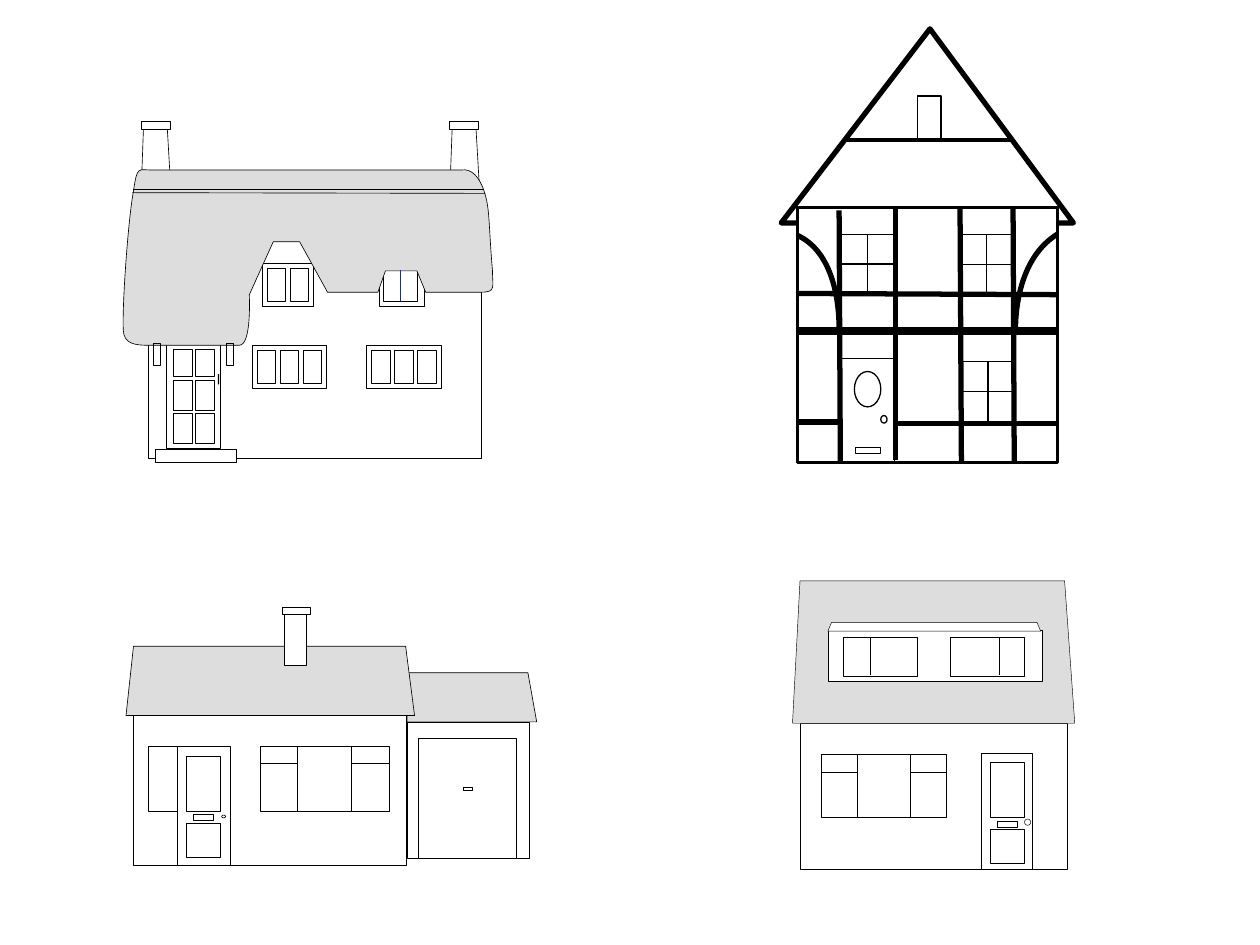
from dataclasses import dataclass

from pptx import Presentation
from pptx.dml.color import RGBColor
from pptx.enum.shapes import MSO_CONNECTOR, MSO_SHAPE
from pptx.oxml.ns import qn
from pptx.oxml.xmlchemy import OxmlElement
from pptx.util import Pt

RECT, OVAL = MSO_SHAPE.RECTANGLE, MSO_SHAPE.OVAL
STRAIGHT = MSO_CONNECTOR.STRAIGHT
BLANK_LAYOUT = 6


@dataclass(frozen=True)
class Theme:
    ink: str = "000000"
    paper: str = "FFFFFF"
    roof: str = "DDDDDD"
    blue: str = "0E2FAD"
    hairline: float = 0.25
    fine: float = 0.38
    pane: float = 0.63
    thin: float = 0.75
    frame: float = 1
    wall: float = 1.63
    tie: float = 2.25
    timber: float = 3
    beam: float = 4.5


THEME = Theme()


class House:
    """A group whose parts are placed in points from the box's top left corner."""

    def __init__(self, page, box, weight, fill=None):
        self.shapes = page.shapes.add_group_shape().shapes
        self.left, self.top = box
        self.weight, self.fill = weight, fill

    def at(self, x, y):
        return Pt(self.left + x), Pt(self.top + y)

    def paint(self, shape, fill, weight):
        shape.shadow.inherit = False
        fill = fill or self.fill
        if fill:
            shape.fill.solid()
            shape.fill.fore_color.rgb = RGBColor.from_string(fill)
        else:
            shape.fill.background()
        weight = self.weight if weight is None else weight
        if weight:
            shape.line.width = Pt(weight)
            shape.line.color.rgb = RGBColor.from_string(THEME.ink)
        else:
            shape.line.fill.background()

    def block(self, x, y, width, height, fill=None, weight=None, kind=RECT):
        shape = self.shapes.add_shape(kind, *self.at(x, y), Pt(width), Pt(height))
        self.paint(shape, fill, weight)

    def line(self, x1, y1, x2, y2, weight=None, color=THEME.ink):
        line = self.shapes.add_connector(STRAIGHT, *self.at(x1, y1), *self.at(x2, y2))
        line.line.width = Pt(weight or self.weight)
        line.line.color.rgb = RGBColor.from_string(color)
        line._element.spPr.append(OxmlElement("a:effectLst"))

    def outline(self, start, *steps, fill=None, weight=None, close=True):
        """Each step is the end (x, y) of a straight edge, or the six numbers of a Bezier curve."""
        builder = self.shapes.build_freeform(*self.at(*start), scale=1.0)
        points = [self.at(*step[i:i + 2]) for step in steps for i in range(0, len(step), 2)]
        builder.add_line_segments(points, close=close)
        shape = builder.convert_to_shape()
        edges = iter(list(shape._element.iter(qn("a:lnTo"))))
        for step in steps:
            edge = next(edges)
            if len(step) == 6:
                edge.tag = qn("a:cubicBezTo")
                for extra in (next(edges), next(edges)):
                    edge.append(extra[0])
                    extra.getparent().remove(extra)
        self.paint(shape, fill, weight)

    def cross_window(self, x, y, width, height):
        self.block(x, y, width, height, weight=THEME.pane)
        self.line(x + width / 2, y, x + width / 2, y + height, THEME.thin)
        self.line(x, y + height / 2, x + width, y + height / 2, THEME.thin)

    def casement(self, x, y, width, height, panes, margin=2.9, gap=2.7):
        self.block(x, y, width, height)
        pane = (width - 2 * margin - (panes - 1) * gap) / panes
        for i in range(panes):
            self.block(x + margin + i * (pane + gap), y + margin, pane, height - 2 * margin)

    def picture_window(self, x, y, width, height, bars, transom, weight):
        """A wide window with a fixed middle light and a transom on each side."""
        self.block(x, y, width, height)
        for bar in bars:
            self.line(bar, y, bar, y + height, weight)
        self.line(x, transom, bars[0], transom, weight)
        self.line(bars[1], transom, x + width, transom, weight)

    def front_door(self, x, y, width, height, inset, knob):
        self.block(x, y, width, height)
        self.block(x + 5, y + inset, 19.4, 31.7)
        self.block(x + 5, y + inset + 38.5, 19.4, 19.4)
        self.block(x + 9, y + inset + 33.4, 11.5, 3.6)
        self.block(*knob, kind=OVAL)


def timber_house(page, box):
    house = House(page, box, THEME.timber)
    house.outline((85, 0), (0, 110.9), (167, 110.9))
    house.block(9.4, 102.2, 148.3, 145.4, THEME.paper, THEME.wall)
    for window in ((33.8, 117.4, 31, 33.8), (102.2, 117.4, 30.2, 34.6), (103, 190.1, 30.2, 34.6)):
        house.cross_window(*window)
    house.block(33.8, 188.6, 31, 59, weight=THEME.pane)
    house.block(42.5, 239, 14.4, 3.6, weight=THEME.pane)
    house.line(10.1, 172.8, 157.7, 172.8, THEME.beam)
    for x1, y1, x2, y2 in ((33.1, 103.7, 33.8, 247), (65.5, 102.2, 65.5, 246.2),
                           (102.2, 102.2, 103, 248.4), (132.5, 102.2, 133.2, 248.4),
                           (9.4, 151.2, 158.4, 151.9), (65.5, 225.4, 157.7, 225.4),
                           (33.1, 224.6, 10.1, 224.6)):
        house.line(x1, y1, x2, y2)
    house.outline((133.9, 172.1), (133.9, 155.5, 138.2, 129.6, 157.7, 117.4), close=False)
    house.outline((33.1, 171.4), (33.1, 151.9, 28.1, 126.7, 9.4, 118.1), close=False)
    house.line(37.4, 63.4, 131, 63.4, THEME.tie)
    house.block(77.8, 38.2, 13.7, 25.2, weight=THEME.frame)
    for oval in ((41.8, 195.8, 15.1, 20.2), (56.9, 221, 3.6, 4.3)):
        house.block(*oval, fill=THEME.paper, weight=THEME.thin, kind=OVAL)


def thatched_cottage(page, box):
    house = House(page, box, THEME.fine)
    house.block(80.6, 82.1, 29.5, 24.5, THEME.paper, 0)
    house.block(15.1, 64.8, 190.1, 128.2)
    house.casement(79.9, 81.4, 29.5, 24.5, panes=2)
    for x in (74.2, 139.7):
        house.casement(x, 128.2, 42.5, 24.5, panes=3)
    house.block(146.9, 81.4, 25.9, 24.5)
    house.block(149, 83.5, 19.8, 19.4)
    for x in (10.8, 187.2):
        house.outline((x + 17.3, 43.2), (x, 43.2), (x + 1.4, 5), (x + 15.1, 5))
        house.block(x, 0, 16.6, 5)
    house.block(25.2, 127.4, 31, 59.8)
    house.block(18.7, 187.9, 46.8, 7.2, THEME.paper)
    for y, height in ((130.3, 15.8), (148.3, 17.3), (167, 17.3)):
        for x in (29.2, 41.8):
            house.block(x, y, 10.8, height)
    house.outline(
        (67, 128.2), (74.2, 128.2, 72.7, 99.4, 72.7, 99.4), (86.4, 69.1), (101.5, 69.1),
        (117.4, 97.9), (146.2, 97.9), (150.5, 85.7), (168.5, 85.7), (173.5, 97.9), (205.2, 97.9),
        (213.8, 97.9, 211.7, 95, 211.7, 85.7), (209.5, 60.5, 210.2, 51.1, 207.4, 41.8),
        (204.5, 31.7, 199.4, 27, 193.7, 28.1), (17.3, 28.1),
        (9.4, 28.1, 8.6, 25.2, 6.5, 40.3), (3.6, 55.4, 0, 104.4, 0.7, 119.5),
        (1, 127.4, 7.2, 128.2, 15.1, 128.2), fill=THEME.roof)
    for x in (18, 59.8):
        house.block(x, 127.4, 3.8, 12.2)
    house.block(54.7, 144.7, 0.7, 5.8, THEME.ink, 0)
    house.line(6.5, 38.9, 206.6, 38.9)
    house.line(5.8, 41, 207.4, 41.4)
    house.line(159.1, 103, 159.1, 85, THEME.thin, THEME.blue)


def bungalow(page, box):
    house = House(page, box, THEME.fine, THEME.paper)
    house.outline((160.6, 37.4), (229.7, 37.4), (234.7, 65.5), (160.6, 65.5), fill=THEME.roof)
    house.block(4.3, 61.9, 156.2, 85.7)
    house.picture_window(77, 79.2, 73.4, 37.4, (97.9, 128.9), 89.3, THEME.thin)
    house.block(13, 79.2, 16.6, 37.4)
    house.front_door(29.5, 79.2, 30.2, 68.4, inset=5.8, knob=(54.7, 118.8, 2.2, 1.6))
    house.outline((159.8, 22.3), (4.3, 22.3), (0, 61.9), (164.9, 61.9), fill=THEME.roof)
    garage, garage_door, handle = (160.6, 65.5, 69.8, 77.8), (167, 74.9, 56.2, 68.4), (193, 103, 5, 1.4)
    chimney, cap = (90.7, 4.3, 12.2, 28.8), (89.3, 0, 15.8, 4.3)
    for part in (garage, garage_door, chimney, cap, handle):
        house.block(*part)


def dormer_house(page, box):
    house = House(page, box, THEME.hairline, THEME.paper)
    house.block(4.3, 81.4, 152.6, 83.5)
    house.picture_window(16.6, 99.4, 71.3, 36, (36.7, 67), 109.4, THEME.hairline)
    house.front_door(108, 98.6, 28.8, 66.5, inset=5.1, knob=(132.5, 136.1, 3.6, 3.6))
    house.outline((155.5, 0), (4.3, 0), (0, 81.4), (161.3, 81.4), fill=THEME.roof)
    house.block(20.2, 28.1, 122.4, 29.5)
    for x, bar in ((28.8, 44.6), (90, 118.1)):
        house.block(x, 32.4, 42.5, 22.3)
        house.line(bar, 32.4, bar, 54)
    house.outline((20.2, 28.8), (22.3, 23.8), (139.7, 23.8), (141.8, 28.8))


def main():
    deck = Presentation()
    deck.slide_width, deck.slide_height = Pt(720), Pt(540)
    page = deck.slides.add_slide(deck.slide_layouts[BLANK_LAYOUT])
    timber_house(page, (446.4, 16.5))
    thatched_cottage(page, (69.8, 69.1))
    bungalow(page, (72, 347))
    dormer_house(page, (452.9, 331.9))
    deck.save("out.pptx")


if __name__ == "__main__":
    main()
